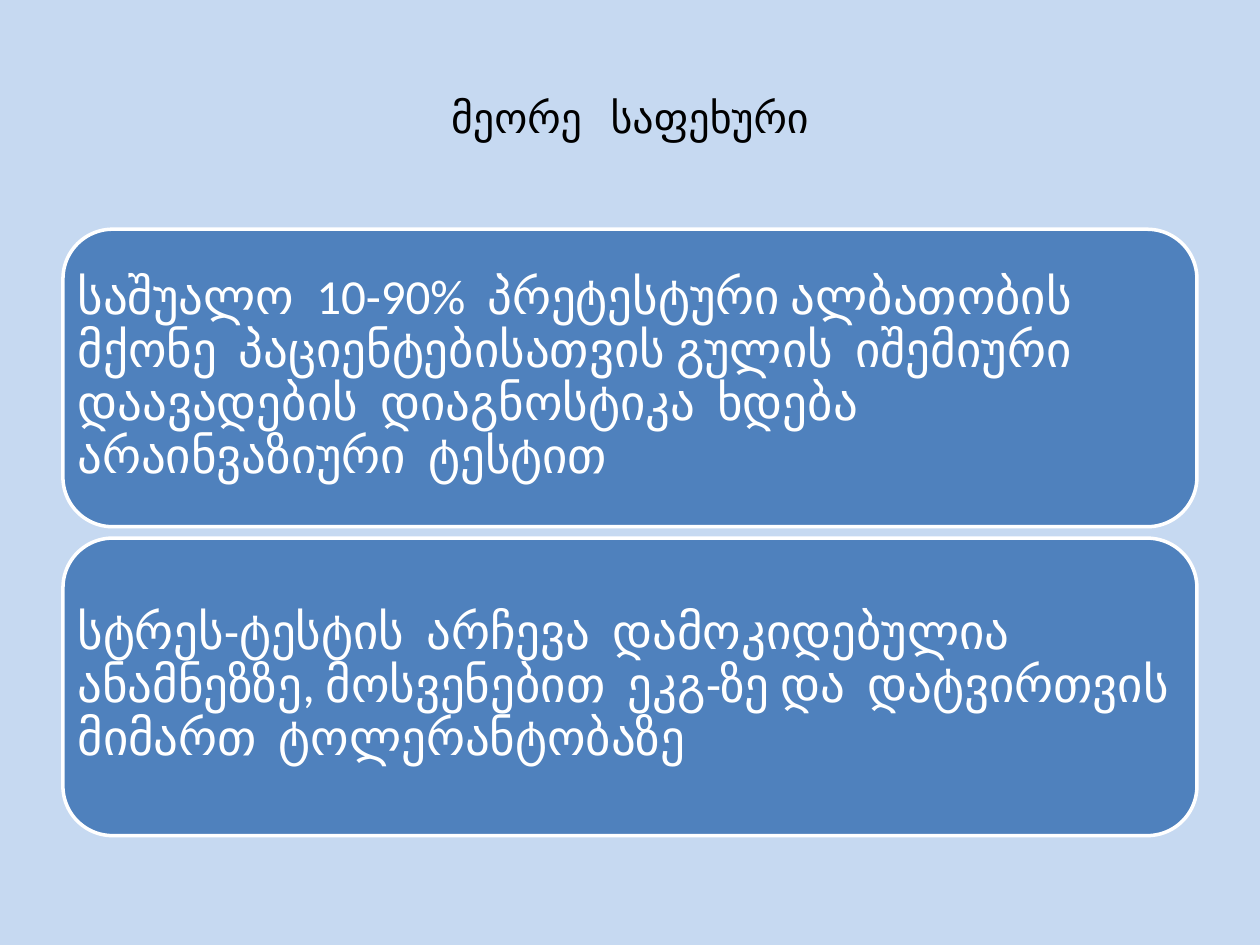
from pptx import Presentation
from pptx.dml.color import RGBColor
from pptx.enum.shapes import MSO_SHAPE
from pptx.enum.text import MSO_ANCHOR, PP_ALIGN
from pptx.util import Pt

ROUNDED = MSO_SHAPE.ROUNDED_RECTANGLE
MIDDLE = MSO_ANCHOR.MIDDLE
LEFT, CENTER = PP_ALIGN.LEFT, PP_ALIGN.CENTER

FONT = "Calibri"
COLORS = {
    "background": "C6D9F1",
    "panel": "4F81BD",
    "light": "FFFFFF",
    "dark": "000000",
}

TITLE = "მეორე   საფეხური"
STATEMENTS = [
    "საშუალო  10-90%  პრეტესტური ალბათობის  მქონე  პაციენტებისათვის გულის  "
    "იშემიური  დაავადების  დიაგნოსტიკა  ხდება არაინვაზიური  ტესტით",
    "სტრეს-ტესტის  არჩევა  დამოკიდებულია ანამნეზზე, მოსვენებით  ეკგ-ზე და  "
    "დატვირთვის  მიმართ  ტოლერანტობაზე",
]


def color(name):
    return RGBColor.from_string(COLORS[name])


def write_text(frame, text, *, size, ink, align, line_spacing=1.0, space_after=0):
    frame.word_wrap = True
    frame.vertical_anchor = MIDDLE
    para = frame.paragraphs[0]
    para.alignment = align
    para.line_spacing = line_spacing
    para.space_after = Pt(space_after)
    span = para.add_run()
    span.text = text
    span.font.name = FONT
    span.font.size = Pt(size)
    span.font.color.rgb = color(ink)


def place_title(page, left, top, width, height):
    title = page.shapes.title
    title.left, title.top = Pt(left), Pt(top)
    title.width, title.height = Pt(width), Pt(height)
    write_text(title.text_frame, TITLE, size=24, ink="dark", align=CENTER)


def place_panels(page, left, top, width, height, gap=6.5):
    count = len(STATEMENTS)
    panel_height = (height - gap * (count - 1)) / count
    for index, statement in enumerate(STATEMENTS):
        panel_top = top + index * (panel_height + gap)
        panel = page.shapes.add_shape(
            ROUNDED, Pt(left), Pt(panel_top), Pt(width), Pt(panel_height))
        panel.shadow.inherit = False
        panel.fill.solid()
        panel.fill.fore_color.rgb = color("panel")
        panel.line.color.rgb = color("light")
        panel.line.width = Pt(2)
        frame = panel.text_frame
        frame.margin_left = frame.margin_right = Pt(0)
        frame.margin_top = frame.margin_bottom = Pt(0)
        write_text(frame, statement, size=28, ink="light", align=LEFT,
                   line_spacing=0.9, space_after=10)


def main():
    deck = Presentation()
    deck.slide_width, deck.slide_height = Pt(720), Pt(540)
    page = deck.slides.add_slide(deck.slide_layouts.get_by_name("Title Only"))
    page.background.fill.solid()
    page.background.fill.fore_color.rgb = color("background")
    place_title(page, 36, 21.6, 648, 90)
    place_panels(page, 36, 131, 648, 346.5)
    deck.save("out.pptx")


if __name__ == "__main__":
    main()
